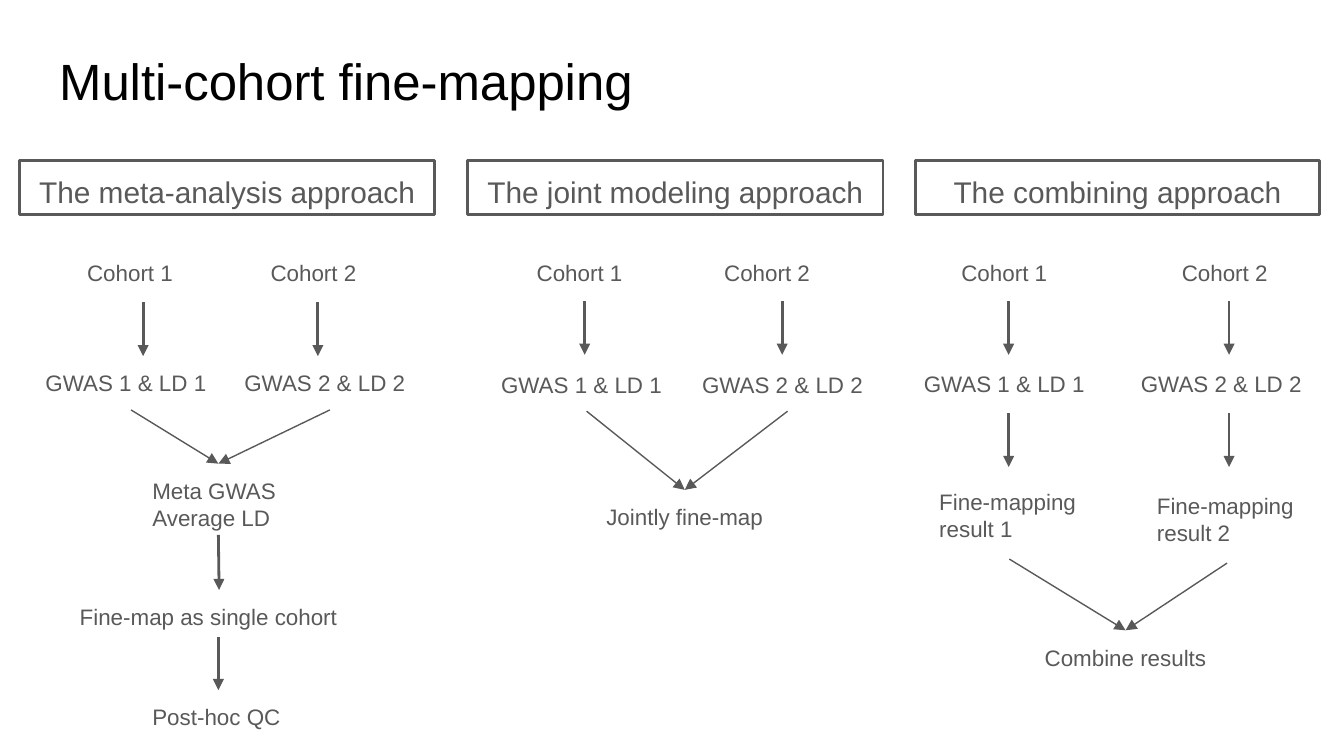
from lxml import etree
from pptx import Presentation
from pptx.dml.color import RGBColor as Rgb
from pptx.enum.shapes import MSO_CONNECTOR as Conn, MSO_SHAPE as Kind
from pptx.enum.text import MSO_ANCHOR as Anchor, MSO_AUTO_SIZE as Fit, PP_ALIGN as Align
from pptx.oxml.ns import qn
from pptx.util import Emu, Pt

PX = 4572
INK = {"title": "000000", "body": "595959"}
FONT = "Arial"


def px(*nums):
    return [Emu(n * PX) for n in nums]


def write(shape, lines, size, ink="body", align=Align.LEFT):
    frame = shape.text_frame
    frame.word_wrap = True
    frame.auto_size = Fit.NONE
    frame.vertical_anchor = Anchor.TOP
    (frame.margin_left, frame.margin_top,
     frame.margin_right, frame.margin_bottom) = px(20, 20, 20, 20)
    frame.text = lines
    for para in frame.paragraphs:
        para.alignment = align
        para.font.name = FONT
        para.font.size = Pt(size)
        para.font.color.rgb = Rgb.from_string(INK[ink])


def label(slide, text, x, y, w, h=80, align=Align.LEFT):
    box = slide.shapes.add_textbox(*px(x, y, w, h))
    write(box, text, 12, align=align)
    return box


def line(slide, x1, y1, x2, y2, width):
    link = slide.shapes.add_connector(Conn.STRAIGHT, *px(x1, y1, x2, y2))
    link.line.color.rgb = Rgb.from_string(INK["body"])
    link.line.width = Pt(width)
    etree.SubElement(link.line._get_or_add_ln(), qn("a:tailEnd"), type="triangle")
    etree.SubElement(link._element.spPr, qn("a:effectLst"))
    return link


def down(slide, x, y):
    return line(slide, x, y, x, y + 80, 1.5)


def merge(slide, tops, goal):
    for top in tops:
        link = line(slide, 0, 0, 0, 0, 0.75)
        link.begin_connect(top, 2)
        link.end_connect(goal, 0)


def header(slide, text, x, y, w):
    box = slide.shapes.add_shape(Kind.RECTANGLE, *px(x, y, w, 80))
    box.shadow.inherit = False
    box.fill.background()
    box.line.color.rgb = Rgb.from_string(INK["body"])
    box.line.width = Pt(1.5)
    write(box, text, 16, align=Align.CENTER)


def cohorts(slide, x, y, names, stems, inputs, stem_y, input_y):
    boxes = []
    for num, (name, stem, left) in enumerate(zip(names, stems, inputs), 1):
        label(slide, f"Cohort {num}", x + name, y + 127, 180)
        down(slide, x + stem, y + stem_y)
        boxes.append(label(slide, f"GWAS {num} & LD {num}", x + left, y + input_y, 294))
    return boxes


def meta(slide, x, y, w):
    header(slide, "The meta-analysis approach", x, y, w)
    tops = cohorts(slide, x, y, (81, 354), (184, 444), (19, 315), 211, 291)
    pool = label(slide, "Meta GWAS\nAverage LD", x + 178, y + 451, 236, 106)
    single = label(slide, "Fine-map as single cohort", x + 70, y + 639, 454)
    check = label(slide, "Post-hoc QC", x + 178, y + 788, 236)
    merge(slide, tops, pool)
    link = down(slide, x + 296, y + 559)
    link.begin_connect(pool, 2)
    link.end_connect(single, 0)
    down(slide, x + 296, y + 709).end_connect(check, 0)


def joint(slide, x, y, w):
    header(slide, "The joint modeling approach", x, y, w)
    tops = cohorts(slide, x, y, (83, 362), (174, 468), (30, 329), 209, 293)
    goal = label(slide, "Jointly fine-map", x + 171, y + 490, 304, align=Align.CENTER)
    merge(slide, tops, goal)


def combine(slide, x, y, w):
    header(slide, "The combining approach", x, y, w)
    stems = 139, 467
    cohorts(slide, x, y, (49, 377), stems, (-7, 316), 209, 292)
    tops = []
    for num, (stem, left, top) in enumerate(zip(stems, (16, 340), (468, 474)), 1):
        down(slide, x + stem, y + 376)
        tops.append(label(slide, f"Fine-mapping result {num}", x + left, y + top, 248, 125))
    goal = label(slide, "Combine results", x + 125, y + 699, 376, align=Align.CENTER)
    merge(slide, tops, goal)


def heading(slide, x, y, w, h):
    title = slide.shapes.title
    title.left, title.top, title.width, title.height = px(x, y, w, h)
    write(title, "Multi-cohort fine-mapping", 27.3, "title")
    title.text_frame.paragraphs[0].line_spacing = 0.9


def main():
    deck = Presentation()
    deck.slide_width, deck.slide_height = px(2000, 1125)
    slide = deck.slides.add_slide(deck.slide_layouts[5])
    heading(slide, 68, 64, 1864, 126)
    meta(slide, 29, 239, 618)
    joint(slide, 696, 239, 618)
    combine(slide, 1362, 239, 602)
    deck.save("out.pptx")


if __name__ == "__main__":
    main()
